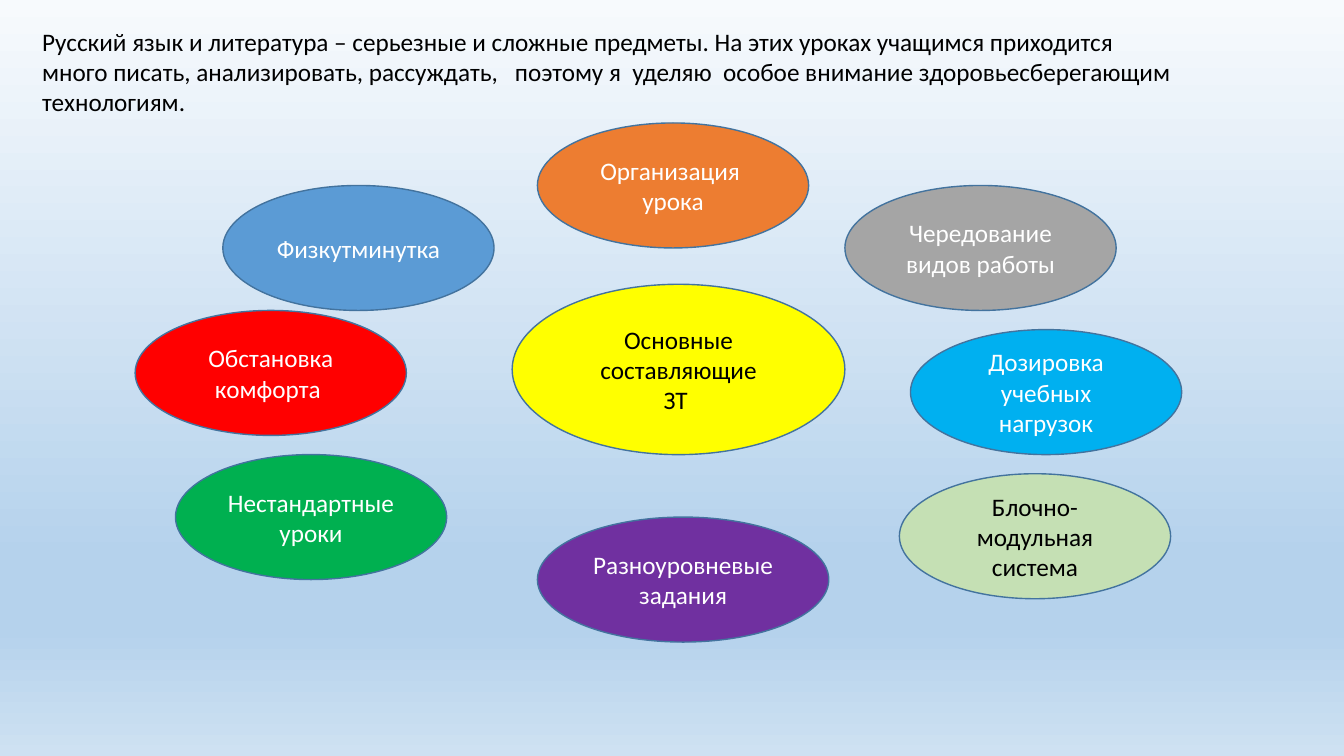
from lxml import etree
from pptx import Presentation
from pptx.dml.color import RGBColor
from pptx.enum.shapes import MSO_SHAPE
from pptx.enum.text import MSO_ANCHOR, MSO_AUTO_SIZE, PP_ALIGN
from pptx.oxml.ns import qn
from pptx.util import Inches, Pt

OVAL = MSO_SHAPE.OVAL
MIDDLE = MSO_ANCHOR.MIDDLE
CENTER = PP_ALIGN.CENTER
GROW = MSO_AUTO_SIZE.SHAPE_TO_FIT_TEXT

FONT, SIZE = "Calibri", 18
COLORS = {
    "black": "000000", "white": "FFFFFF", "outline": "43739E",
    "yellow": "FFFF00", "orange": "ED7D31", "gray": "A5A5A5",
    "blue": "5B9BD5", "red": "FF0000", "green": "00B050",
    "purple": "7030A0", "sky": "00B0F0", "lime": "C5E0B4",
}
BACKGROUND = [(0, "F7FAFD"), (74, "B5D2EC"), (83, "B5D2EC"), (100, "CEE1F2")]

INTRO = (
    "Русский язык и литература – серьезные и сложные предметы. На этих уроках "
    "учащимся приходится много писать, анализировать, рассуждать,   поэтому я  "
    "уделяю  особое внимание здоровьесберегающим технологиям."
)
CORE_SIZE = (3.3, 1.69)
OVAL_SIZE = (2.69, 1.24)
WIDE_SIZE = (2.89, 1.24)
OVALS = [
    ("Основные составляющие\nЗТ ", 5.08, 2.82, CORE_SIZE, "yellow", "black"),
    ("Организация \nурока", 5.33, 1.22, OVAL_SIZE, "orange", "white"),
    ("Чередование видов работы", 8.38, 1.84, OVAL_SIZE, "gray", "white"),
    ("Физкутминутка", 2.21, 1.84, OVAL_SIZE, "blue", "white"),
    ("Обстановка комфорта ", 1.34, 3.08, OVAL_SIZE, "red", "white"),
    ("Нестандартные уроки", 1.74, 4.51, OVAL_SIZE, "green", "white"),
    ("Разноуровневые задания", 5.33, 5.13, WIDE_SIZE, "purple", "white"),
    ("Дозировка учебных нагрузок", 9.03, 3.27, OVAL_SIZE, "sky", "white"),
    ("Блочно-модульная система", 8.92, 4.7, OVAL_SIZE, "lime", "black"),
]


def rgb(name):
    return RGBColor.from_string(COLORS[name])


def write(tf, text, color, align=None):
    tf.word_wrap = True
    tf.text = text
    for p in tf.paragraphs:
        p.alignment = align
        for r in p.runs:
            r.font.name = FONT
            r.font.size = Pt(SIZE)
            r.font.color.rgb = rgb(color)


def paint_background(s):
    fill = s.background.fill
    fill.gradient()
    fill.gradient_angle = 270
    stops = next(s.element.iter(qn("a:gsLst")))
    for stop in list(stops):
        stops.remove(stop)
    for percent, color in BACKGROUND:
        stop = etree.SubElement(stops, qn("a:gs"), pos=str(percent * 1000))
        etree.SubElement(stop, qn("a:srgbClr"), val=color)


def add_oval(s, text, left, top, size, fill, color):
    width, height = size
    sp = s.shapes.add_shape(
        OVAL, Inches(left), Inches(top), Inches(width), Inches(height))
    sp.shadow.inherit = False
    sp.fill.solid()
    sp.fill.fore_color.rgb = rgb(fill)
    sp.line.color.rgb = rgb("outline")
    sp.line.width = Pt(1)
    sp.text_frame.vertical_anchor = MIDDLE
    write(sp.text_frame, text, color, CENTER)


def main():
    prs = Presentation()
    prs.slide_width, prs.slide_height = Inches(13.33), Inches(7.5)
    s = prs.slides.add_slide(prs.slide_layouts[6])
    paint_background(s)

    intro = s.shapes.add_textbox(
        Inches(0.32), Inches(0.21), Inches(11.45), Inches(1.01))
    write(intro.text_frame, INTRO, "black")
    intro.text_frame.auto_size = GROW

    for oval in OVALS:
        add_oval(s, *oval)
    prs.save("out.pptx")


if __name__ == "__main__":
    main()
